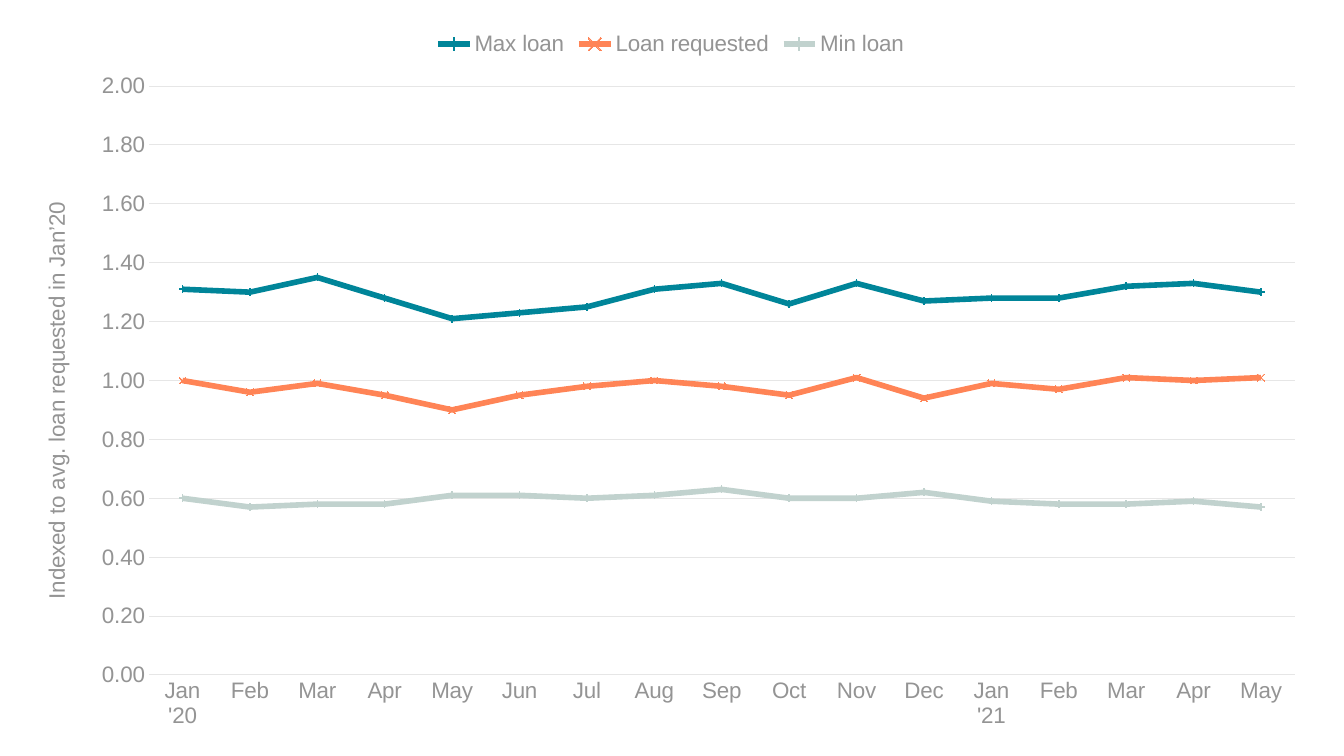
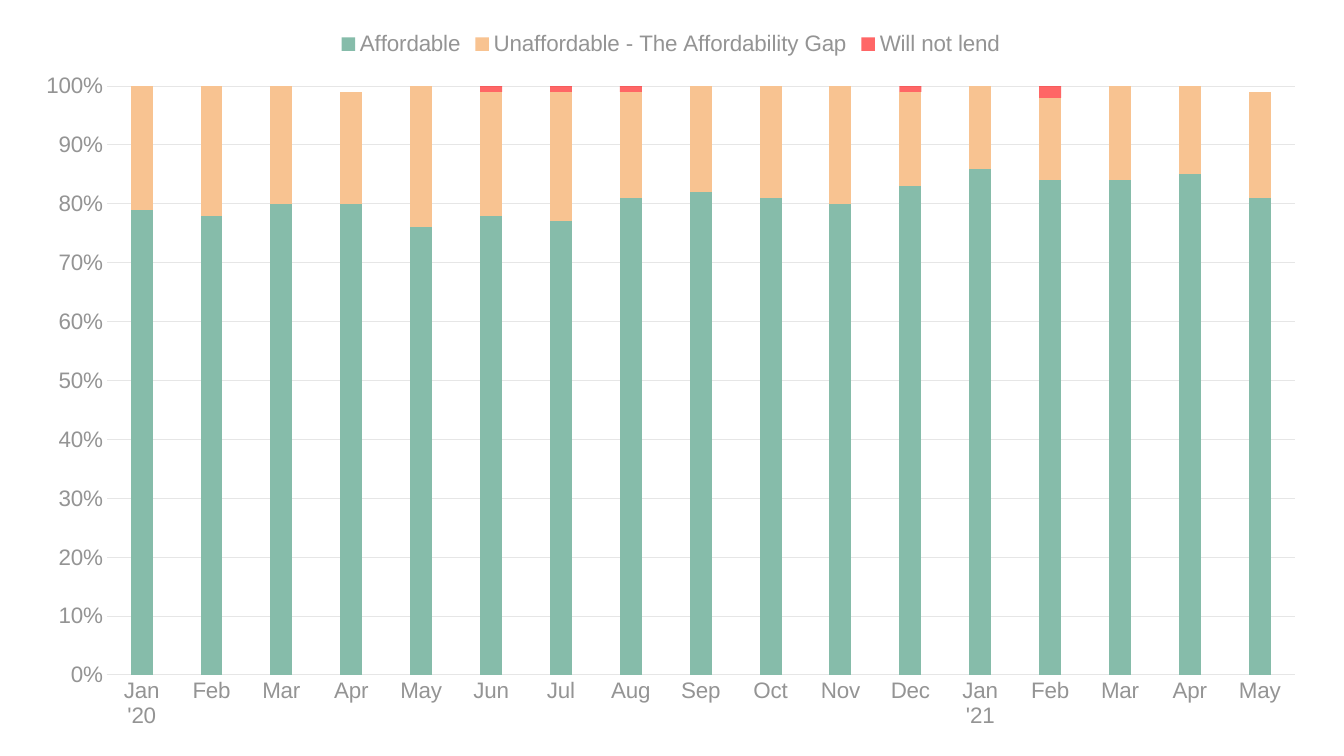
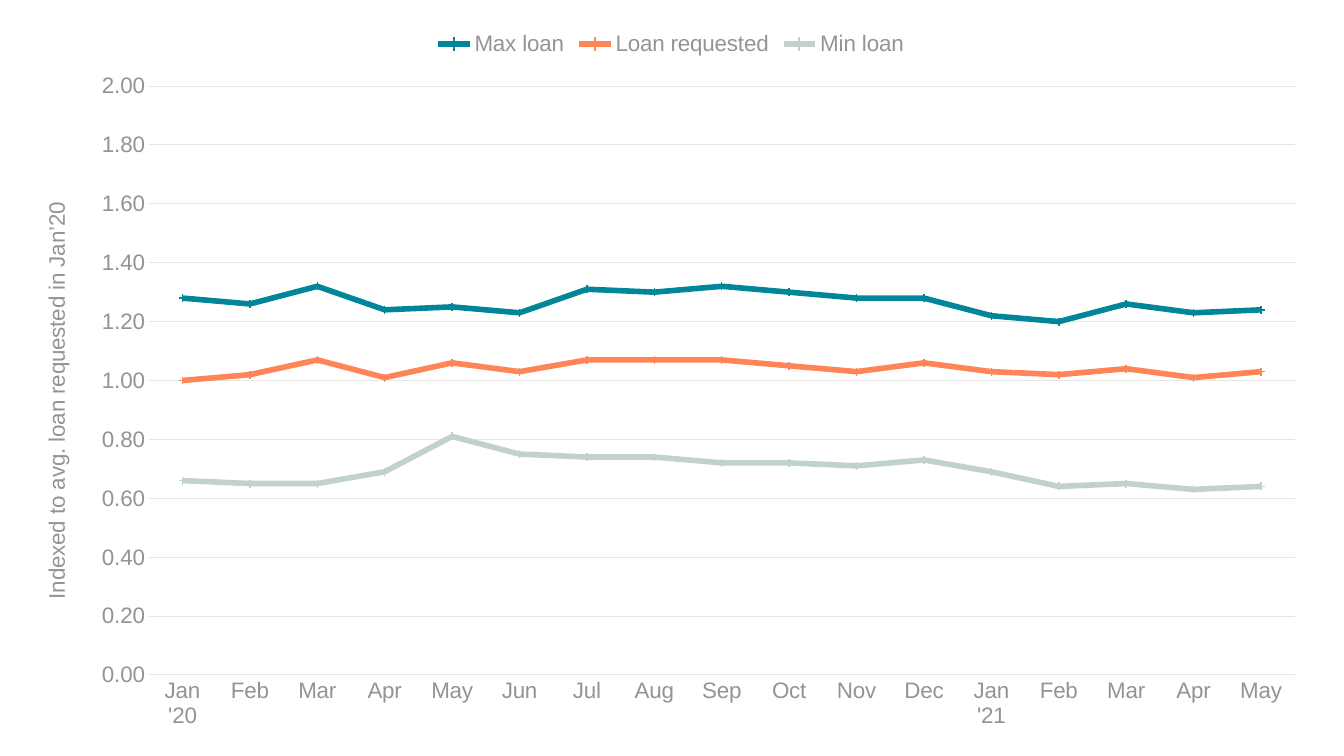
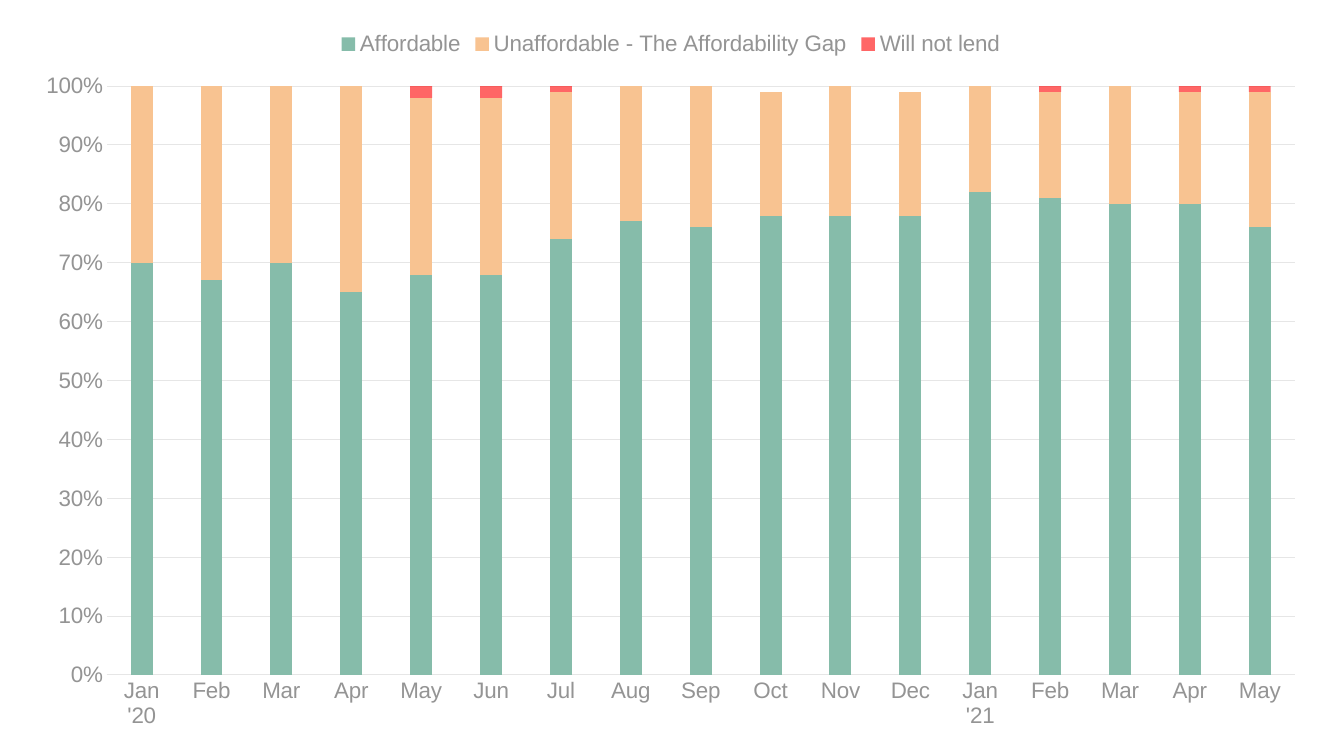
"""Build four loan charts: indexed loan amounts and shares of affordable requests."""
from lxml import etree
from pptx import Presentation
from pptx.chart.data import CategoryChartData
from pptx.dml.color import RGBColor
from pptx.enum import chart as ch
from pptx.oxml.ns import qn
from pptx.util import Cm, Pt

FONT = "Arial"
TEAL = RGBColor(0x00, 0x85, 0x99)
ORANGE = RGBColor(0xFF, 0x84, 0x56)
MIST = RGBColor(0xC1, 0xD2, 0xCE)
GREEN = RGBColor(0x86, 0xBC, 0xAA)
PEACH = RGBColor(0xF8, 0xC3, 0x91)
RED = RGBColor(0xFF, 0x00, 0x00)
GRID = RGBColor(0xE6, 0xE6, 0xE6)
LABEL = RGBColor(0x94, 0x94, 0x94)
DARK = RGBColor(0x5B, 0x5B, 0x5B)
PLUS, CROSS = ch.XL_MARKER_STYLE.PLUS, ch.XL_MARKER_STYLE.X

MONTHS = ["Jan '20", "Feb", "Mar", "Apr", "May", "Jun", "Jul", "Aug", "Sep",
          "Oct", "Nov", "Dec", "Jan '21", "Feb", "Mar", "Apr", "May"]
LOAN_AXIS_TITLE = "Indexed to avg. loan requested in Jan’20"
LOAN_SERIES = [("Max loan", TEAL), ("Loan requested", ORANGE), ("Min loan", MIST)]
SHARE_SERIES = [("Affordable", GREEN),
                ("Unaffordable - The Affordability Gap", PEACH),
                ("Will not lend", RED)]

LOANS_FIRST = [
    [1.31, 1.3, 1.35, 1.28, 1.21, 1.23, 1.25, 1.31, 1.33, 1.26, 1.33, 1.27, 1.28, 1.28, 1.32, 1.33, 1.3],
    [1, 0.96, 0.99, 0.95, 0.9, 0.95, 0.98, 1, 0.98, 0.95, 1.01, 0.94, 0.99, 0.97, 1.01, 1, 1.01],
    [0.6, 0.57, 0.58, 0.58, 0.61, 0.61, 0.6, 0.61, 0.63, 0.6, 0.6, 0.62, 0.59, 0.58, 0.58, 0.59, 0.57],
]
SHARES_FIRST = [
    [0.79, 0.78, 0.8, 0.8, 0.76, 0.78, 0.77, 0.81, 0.82, 0.81, 0.8, 0.83, 0.86, 0.84, 0.84, 0.85, 0.81],
    [0.21, 0.22, 0.2, 0.19, 0.24, 0.21, 0.22, 0.18, 0.18, 0.19, 0.2, 0.16, 0.14, 0.14, 0.16, 0.15, 0.18],
    [0, 0, 0, 0, 0.01, 0.01, 0.01, 0.01, 0, 0, 0, 0.01, 0, 0.02, 0, 0, 0],
]
LOANS_SECOND = [
    [1.28, 1.26, 1.32, 1.24, 1.25, 1.23, 1.31, 1.3, 1.32, 1.3, 1.28, 1.28, 1.22, 1.2, 1.26, 1.23, 1.24],
    [1, 1.02, 1.07, 1.01, 1.06, 1.03, 1.07, 1.07, 1.07, 1.05, 1.03, 1.06, 1.03, 1.02, 1.04, 1.01, 1.03],
    [0.66, 0.65, 0.65, 0.69, 0.81, 0.75, 0.74, 0.74, 0.72, 0.72, 0.71, 0.73, 0.69, 0.64, 0.65, 0.63, 0.64],
]
SHARES_SECOND = [
    [0.7, 0.67, 0.7, 0.65, 0.68, 0.68, 0.74, 0.77, 0.76, 0.78, 0.78, 0.78, 0.82, 0.81, 0.8, 0.8, 0.76],
    [0.3, 0.33, 0.3, 0.35, 0.3, 0.3, 0.25, 0.23, 0.24, 0.21, 0.22, 0.21, 0.18, 0.18, 0.2, 0.19, 0.23],
    [0, 0, 0, 0, 0.03, 0.02, 0.01, 0, 0, 0, 0, 0, 0, 0.01, 0, 0.01, 0.01],
]

SLIDE_WIDTH, SLIDE_HEIGHT = Cm(33.87), Cm(19.05)
CHART_BOX = Cm(0.51), Cm(0.51), Cm(32.79), Cm(18.21)
PLOT_TOP, PLOT_RIGHT, PLOT_BOTTOM = Cm(1.66), Cm(32.12), Cm(16.5)


def style_font(font, color=LABEL):
    font.name, font.size, font.bold = FONT, Pt(16), False
    font.color.rgb = color


def style_line(line, color, width):
    line.color.rgb = color
    line.width = Pt(width)


def place_plot(chart, left):
    """Fix the inner plot area as fractions of the chart."""
    plot_area = chart._chartSpace.chart.plotArea
    for old in plot_area.findall(qn("c:layout")):
        plot_area.remove(old)
    layout = etree.Element(qn("c:layout"))
    manual = etree.SubElement(layout, qn("c:manualLayout"))
    width, height = CHART_BOX[2:]
    settings = {"layoutTarget": "inner", "xMode": "edge", "yMode": "edge",
                "x": left / width, "y": PLOT_TOP / height,
                "w": (PLOT_RIGHT - left) / width,
                "h": (PLOT_BOTTOM - PLOT_TOP) / height}
    for name, value in settings.items():
        etree.SubElement(manual, qn(f"c:{name}")).set("val", str(value))
    plot_area.insert(0, layout)


def style_axes(chart, maximum, step, number_format):
    for axis in (chart.category_axis, chart.value_axis):
        axis.major_tick_mark = axis.minor_tick_mark = ch.XL_TICK_MARK.NONE
        style_font(axis.tick_labels.font)
    months, values = chart.category_axis, chart.value_axis
    months.has_major_gridlines = False
    style_line(months.format.line, GRID, 0.75)
    values.format.line.fill.background()
    values.minimum_scale, values.maximum_scale, values.major_unit = 0, maximum, step
    values.has_major_gridlines = True
    style_line(values.major_gridlines.format.line, GRID, 0.75)
    values.tick_labels.number_format = number_format
    values.tick_labels.number_format_is_linked = False


def add_chart(presentation, kind, series, rows, number_format):
    slide = presentation.slides.add_slide(presentation.slide_layouts[6])
    data = CategoryChartData(number_format=number_format)
    data.categories = MONTHS
    for (name, _), values in zip(series, rows):
        data.add_series(name, values)
    chart = slide.shapes.add_chart(kind, *CHART_BOX, data).chart
    style_font(chart.font, DARK)
    chart.has_title = False
    chart.has_legend = True
    chart.legend.position = ch.XL_LEGEND_POSITION.TOP
    chart.legend.include_in_layout = False
    style_font(chart.legend.font)
    chart.plots[0].vary_by_categories = False
    return chart


def add_loan_chart(presentation, rows, markers):
    chart = add_chart(presentation, ch.XL_CHART_TYPE.LINE_MARKERS, LOAN_SERIES, rows, "0.00")
    style_axes(chart, 2, 0.2, "0.00")
    place_plot(chart, Cm(3.24))
    frame = chart.value_axis.axis_title.text_frame
    frame.text = LOAN_AXIS_TITLE
    frame._txBody.bodyPr.set("rot", "-5400000")
    style_font(frame.paragraphs[0].font)
    for series, (_, color), marker in zip(chart.plots[0].series, LOAN_SERIES, markers):
        series.smooth = False
        style_line(series.format.line, color, 4)
        series.marker.style, series.marker.size = marker, 5
        series.marker.format.fill.solid()
        series.marker.format.fill.fore_color.rgb = color
        style_line(series.marker.format.line, color, 0.75)


def add_share_chart(presentation, rows):
    chart = add_chart(presentation, ch.XL_CHART_TYPE.COLUMN_STACKED, SHARE_SERIES, rows, "0%")
    style_axes(chart, 1, 0.1, "0%")
    place_plot(chart, Cm(2.18))
    plot = chart.plots[0]
    plot.gap_width, plot.overlap = 219, 100
    for series, (_, color) in zip(plot.series, SHARE_SERIES):
        series.format.fill.solid()
        series.format.fill.fore_color.rgb = color
        if color == RED:
            fill_color = series._element.find(f"{qn('c:spPr')}/{qn('a:solidFill')}/{qn('a:srgbClr')}")
            etree.SubElement(fill_color, qn("a:alpha")).set("val", "60000")


def main():
    presentation = Presentation()
    presentation.slide_width, presentation.slide_height = SLIDE_WIDTH, SLIDE_HEIGHT
    add_loan_chart(presentation, LOANS_FIRST, (PLUS, CROSS, PLUS))
    add_share_chart(presentation, SHARES_FIRST)
    add_loan_chart(presentation, LOANS_SECOND, (PLUS, PLUS, PLUS))
    add_share_chart(presentation, SHARES_SECOND)
    presentation.save("out.pptx")


if __name__ == "__main__":
    main()
